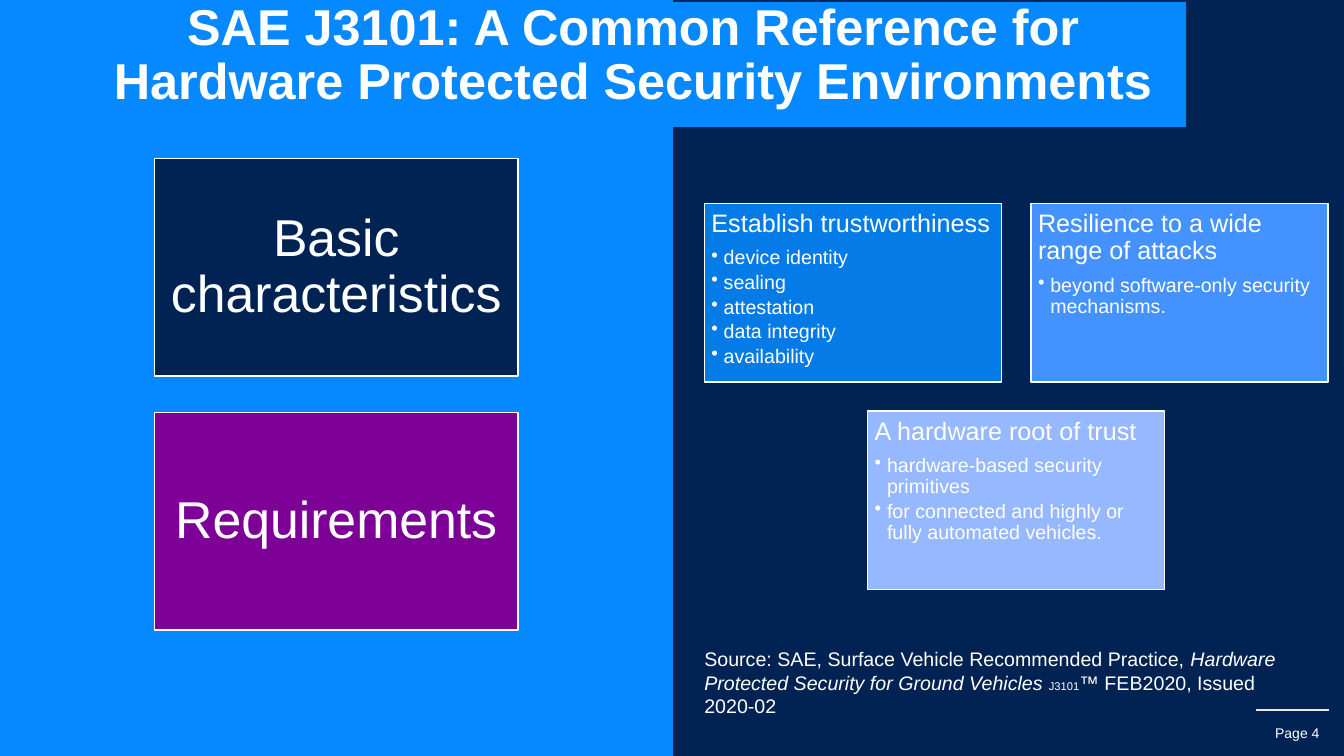
from lxml.etree import SubElement
from pptx import Presentation
from pptx.dml.color import RGBColor
from pptx.enum.shapes import MSO_CONNECTOR, MSO_SHAPE
from pptx.enum.text import MSO_ANCHOR, PP_ALIGN
from pptx.oxml.ns import qn
from pptx.util import Cm, Pt

COLORS = {
    "navy": "002353", "blue": "0688FF", "purple": "7D0097", "white": "FFFFFF",
    "rule": "E8E7E7", "deep": "057BE7", "mid": "4492FD", "pale": "96B8FF",
}
TITLE = "SAE J3101: A Common Reference for Hardware Protected Security Environments"
TOPICS = [("Basic characteristics", "navy"), ("Requirements", "purple")]
CARDS = [
    ("Establish trustworthiness", "deep",
     ["device identity", "sealing", "attestation", "data integrity", "availability"]),
    ("Resilience to a wide range of attacks", "mid",
     ["beyond software-only security mechanisms."]),
    ("A hardware root of trust", "pale",
     ["hardware-based security primitives",
      "for connected and highly or fully automated vehicles."]),
]
SOURCE = [
    ("Source: SAE, Surface Vehicle Recommended Practice, ", 14, False),
    ("Hardware Protected Security for Ground Vehicles ", 14, True),
    ("J3101", 8, False),
    ("™ FEB2020, Issued 2020-02", 14, False),
]
PAGE = "Page 4"

WIDTH, HEIGHT = 33.87, 19.05
TOPIC = {"x": 3.89, "y": 3.99, "w": 9.17, "h": 5.49, "step": 6.4}
CARD = {"x": 17.75, "y": 5.13, "w": 7.49, "h": 4.5, "dx": 8.23, "dy": 5.23, "cols": 2}


def color(name):
    return RGBColor.from_string(COLORS[name])


def paint(shape, fill, line):
    shape.fill.solid()
    shape.fill.fore_color.rgb = color(fill)
    shape.line.color.rgb = color(line)
    shape.line.width = Pt(1)


def add_box(slide, x, y, w, h, fill, line="white"):
    box = slide.shapes.add_shape(MSO_SHAPE.RECTANGLE, Cm(x), Cm(y), Cm(w), Cm(h))
    box.shadow.inherit = False
    paint(box, fill, line)
    return box


def set_frame(shape, inset=0, anchor=MSO_ANCHOR.TOP):
    frame = shape.text_frame
    frame.word_wrap = True
    frame.vertical_anchor = anchor
    frame.margin_left = frame.margin_right = Cm(inset)
    frame.margin_top = frame.margin_bottom = Cm(inset)
    return frame


def style(para, size, align=PP_ALIGN.LEFT, spacing=None, after=0, bold=False):
    para.alignment = align
    para.line_spacing = spacing
    para.space_before = Pt(0)
    para.space_after = Pt(after)
    para.font.name = "Arial"
    para.font.size = Pt(size)
    para.font.bold = bold
    para.font.color.rgb = color("white")


def add_bullet(para):
    props = para._p.get_or_add_pPr()
    props.set("marL", str(Cm(0.31)))
    props.set("indent", str(-Cm(0.31)))
    SubElement(props, qn("a:buChar")).set("char", "•")


def add_title(slide):
    title = slide.shapes.title
    title.left, title.top, title.width, title.height = Cm(2.03), Cm(0.05), Cm(27.86), Cm(3.15)
    title.fill.solid()
    title.fill.fore_color.rgb = color("blue")
    frame = set_frame(title)
    frame.text = TITLE
    style(frame.paragraphs[0], 36, PP_ALIGN.CENTER, 0.9, bold=True)
    slide.shapes._spTree.append(title._element)


def add_topics(slide):
    for i, (name, fill) in enumerate(TOPICS):
        box = add_box(slide, TOPIC["x"], TOPIC["y"] + i * TOPIC["step"],
                      TOPIC["w"], TOPIC["h"], fill)
        frame = set_frame(box, 0.37, MSO_ANCHOR.MIDDLE)
        frame.text = name
        style(frame.paragraphs[0], 37, PP_ALIGN.CENTER, 0.9)


def add_cards(slide):
    cols = CARD["cols"]
    for i, (head, fill, points) in enumerate(CARDS):
        row, col = divmod(i, cols)
        count = min(cols, len(CARDS) - row * cols)
        shift = col + (cols - count) / 2
        box = add_box(slide, CARD["x"] + shift * CARD["dx"], CARD["y"] + row * CARD["dy"],
                      CARD["w"], CARD["h"], fill)
        frame = set_frame(box, 0.18)
        frame.text = head
        style(frame.paragraphs[0], 18, spacing=0.9, after=7.2)
        for point in points:
            para = frame.add_paragraph()
            para.text = point
            para.level = 1
            add_bullet(para)
            style(para, 14, spacing=0.9, after=2.4)


def add_source(slide):
    box = slide.shapes.add_textbox(Cm(17.75), Cm(16.31), Cm(15.06), Cm(2.54))
    para = set_frame(box).paragraphs[0]
    style(para, 14)
    for text, size, italic in SOURCE:
        run = para.add_run()
        run.text = text
        run.font.size = Pt(size)
        run.font.italic = italic


def add_footer(slide):
    rule = slide.shapes.add_connector(
        MSO_CONNECTOR.STRAIGHT, Cm(31.65), Cm(17.9), Cm(33.5), Cm(17.9))
    rule.line.color.rgb = color("rule")
    rule.line.width = Pt(1.5)
    SubElement(rule._element.spPr, qn("a:effectLst"))
    box = slide.shapes.add_textbox(Cm(31.04), Cm(18.26), Cm(2.21), Cm(0.51))
    frame = set_frame(box)
    frame.text = PAGE
    style(frame.paragraphs[0], 10, PP_ALIGN.RIGHT)


def main():
    deck = Presentation()
    deck.slide_width, deck.slide_height = Cm(WIDTH), Cm(HEIGHT)
    slide = deck.slides.add_slide(deck.slide_layouts[5])
    slide.background.fill.solid()
    slide.background.fill.fore_color.rgb = color("navy")
    add_footer(slide)
    add_box(slide, 0, 0, WIDTH / 2, HEIGHT, "blue", "blue")
    add_topics(slide)
    add_title(slide)
    add_cards(slide)
    add_source(slide)
    deck.save("out.pptx")


if __name__ == "__main__":
    main()
